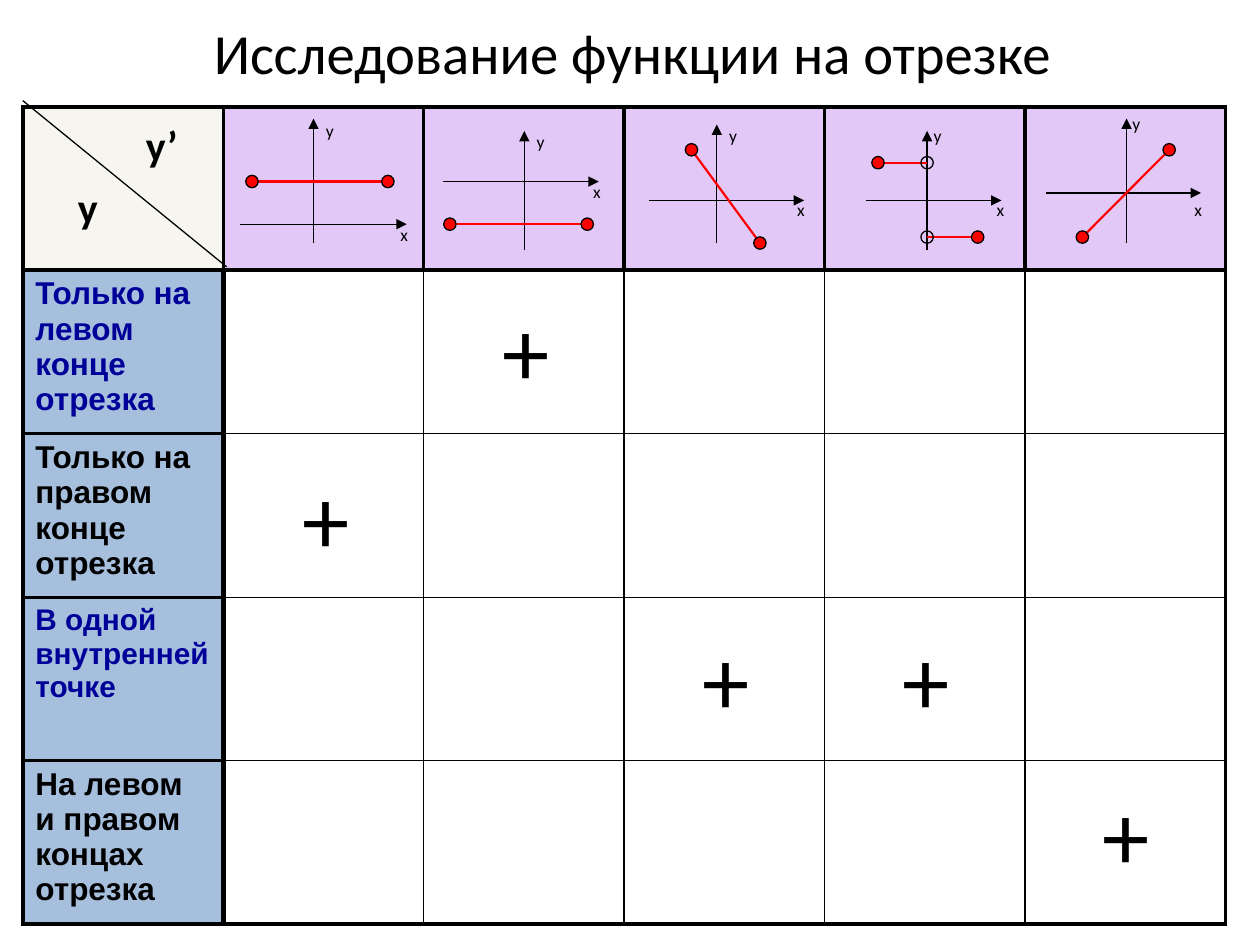
"""Build a slide with a table matching function graphs to derivative zeros on a segment."""
from lxml.etree import SubElement
from pptx import Presentation
from pptx.dml.color import RGBColor
from pptx.enum.shapes import MSO_CONNECTOR as Connector, MSO_SHAPE as Shape
from pptx.enum.text import MSO_ANCHOR as Anchor, PP_ALIGN as Align
from pptx.oxml.ns import qn
from pptx.util import Cm, Pt

color = RGBColor.from_string


def write(frame, text, size, font="Calibri", ink="000000", bold=False, align=Align.LEFT):
    frame.word_wrap = True
    paragraph = frame.paragraphs[0]
    paragraph.alignment = align
    run = paragraph.add_run()
    run.text = text
    run.font.name = font
    run.font.size = Pt(size)
    run.font.bold = bold
    run.font.color.rgb = color(ink)


def add_line(shapes, points, ink="000000", width=0.75, arrow=False):
    line = shapes.add_connector(Connector.STRAIGHT, *[Cm(value) for value in points])
    line.line.color.rgb = color(ink)
    line.line.width = Pt(width)
    if arrow:
        SubElement(line.line._get_or_add_ln(), qn("a:tailEnd"), type="triangle")
    SubElement(line._element.spPr, qn("a:effectLst"))


presentation = Presentation()
presentation.slide_width = Cm(25.4)
presentation.slide_height = Cm(19.05)
slide = presentation.slides.add_slide(presentation.slide_layouts[6])
shapes = slide.shapes
slide.background.fill.solid()
slide.background.fill.fore_color.rgb = color("FFFFFF")

title = shapes.add_textbox(Cm(1.32), Cm(0.41), Cm(22.86), Cm(1.27))
title.text_frame.vertical_anchor = Anchor.MIDDLE
write(title.text_frame, "Исследование функции на отрезке", 32.4, align=Align.CENTER)

row_labels = [
    ("Только на левом конце отрезка", 18, "000099"),
    ("Только на правом конце отрезка", 18, "000000"),
    ("В одной внутренней точке", 17, "000099"),
    ("На левом и правом концах отрезка", 18, "000000"),
]
row_count, column_count = 5, 6
table = shapes.add_table(
    row_count, column_count, Cm(0.46), Cm(2.16), Cm(24.26), Cm(16.4)
).table
table.first_row = False
table.horz_banding = False
for column in table.columns:
    column.width = Cm(4.04)
for row in table.rows:
    row.height = Cm(3.28)

for row in range(row_count):
    for column in range(column_count):
        cell = table.cell(row, column)
        properties = cell._tc.get_or_add_tcPr()
        edges = [
            ("a:lnL", column, column_count, row),
            ("a:lnR", column + 1, column_count, row),
            ("a:lnT", row, row_count, column),
            ("a:lnB", row + 1, row_count, column),
        ]
        for tag, edge, last, across in edges:
            width = 2.25 if across == 0 or edge in (0, last) else 3 if edge == 1 else 1
            border = SubElement(properties, qn(tag), w=str(Pt(width)))
            SubElement(SubElement(border, qn("a:solidFill")), qn("a:srgbClr"), val="000000")
        if row and column:
            cell.fill.background()
            continue
        cell.fill.solid()
        cell.fill.fore_color.rgb = color("4F81BD" if row else "C693F1" if column else "EEECE1")
        SubElement(next(properties.find(qn("a:solidFill")).iterchildren()), qn("a:alpha"), val="50000")
        if row:
            text, size, ink = row_labels[row - 1]
            write(cell.text_frame, text, size, font="Arial", ink=ink, bold=True)

add_line(shapes, (0.46, 2.03, 4.57, 5.38))
for text, left, top in [("у", 1.32, 3.53), ("y’", 2.69, 2.29)]:
    label = shapes.add_textbox(Cm(left), Cm(top), Cm(1.24), Cm(1.27))
    write(label.text_frame, text, 24, bold=True)

# Each graph: x axis, y axis, label positions, segments, whether segments start open
graphs = [
    ((4.83, 4.52, 8.2, 4.52), (6.32, 4.9, 6.32, 2.39), (7.82, 4.39), (6.32, 2.29),
     [(5.08, 3.66, 7.82, 3.66)], False),
    ((8.94, 3.66, 12.07, 3.66), (10.57, 5.03, 10.57, 2.64), (11.71, 3.53), (10.57, 2.51),
     [(9.07, 4.52, 11.84, 4.52)], False),
    ((13.08, 4.04, 16.21, 4.04), (14.45, 4.9, 14.45, 2.51), (15.82, 3.89), (14.45, 2.39),
     [(13.94, 3.02, 15.32, 4.9)], False),
    ((17.45, 4.04, 20.19, 4.04), (18.69, 5.03, 18.69, 2.64), (19.84, 3.89), (18.57, 2.39),
     [(18.69, 3.28, 17.7, 3.28), (18.69, 4.78, 19.71, 4.78)], True),
    ((21.08, 3.89, 24.21, 3.89), (22.71, 4.9, 22.71, 2.39), (23.83, 3.89), (22.58, 2.16),
     [(23.57, 3.02, 21.82, 4.78)], False),
]
dot_size = 0.25
for x_axis, y_axis, x_place, y_place, segments, open_start in graphs:
    add_line(shapes, x_axis, arrow=True)
    add_line(shapes, y_axis, arrow=True)
    for segment in segments:
        add_line(shapes, segment, ink="FF0000", width=1.25)
        for (x, y), hollow in [(segment[:2], open_start), (segment[2:], False)]:
            dot = shapes.add_shape(
                Shape.OVAL, Cm(x - dot_size / 2), Cm(y - dot_size / 2), Cm(dot_size), Cm(dot_size)
            )
            dot.shadow.inherit = False
            dot.line.color.rgb = color("000000")
            dot.line.width = Pt(0.75)
            if hollow:
                dot.fill.background()
            else:
                dot.fill.solid()
                dot.fill.fore_color.rgb = color("FF0000")
    for text, (left, top) in [("х", x_place), ("у", y_place)]:
        label = shapes.add_textbox(Cm(left), Cm(top), Cm(0.66), Cm(0.69))
        write(label.text_frame, text, 10)

for column, top in [(1, 5.77), (0, 9.14), (2, 12.4), (3, 12.4), (4, 15.52)]:
    plus = shapes.add_textbox(Cm(4.57 + 4.03 * column), Cm(top), Cm(4.01), Cm(2.54))
    write(plus.text_frame, "+", 54, align=Align.CENTER)

presentation.save("out.pptx")
